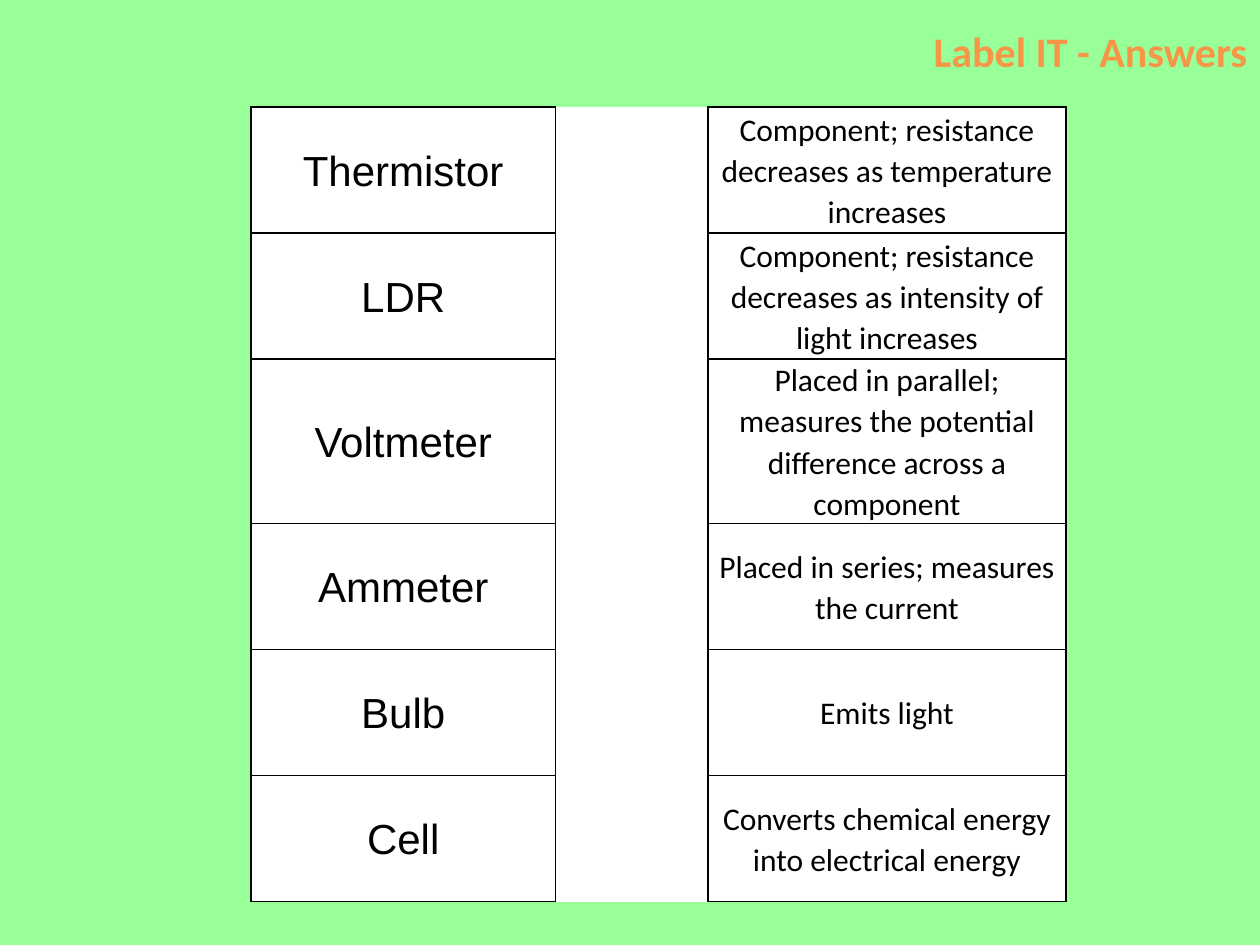
from dataclasses import dataclass

from lxml.etree import SubElement
from pptx import Presentation
from pptx.dml.color import RGBColor
from pptx.enum.text import MSO_ANCHOR, PP_ALIGN
from pptx.oxml.ns import qn
from pptx.util import Inches, Pt


@dataclass(frozen=True)
class Theme:
    background: str = "99FF99"
    heading: str = "F79646"
    ink: str = "000000"
    paper: str = "FFFFFF"
    term_font: str = "Arial"
    body_font: str = "Calibri"
    large: int = 24
    small: int = 18
    line_spacing: float = 1.07
    border: float = 1


ANSWERS = [
    ("Thermistor", "Component; resistance decreases as temperature increases"),
    ("LDR", "Component; resistance decreases as intensity of light increases"),
    ("Voltmeter", "Placed in parallel; measures the potential difference across a component"),
    ("Ammeter", "Placed in series; measures the current"),
    ("Bulb", "Emits light"),
    ("Cell", "Converts chemical energy into electrical energy"),
]
COLUMN_WIDTHS = (2.42, 1.21, 2.84)
ROW_HEIGHT = 1


class SlideBuilder:
    def __init__(self, slide, theme):
        self.slide = slide
        self.theme = theme
        self.fill(slide.background, theme.background)

    def fill(self, target, color):
        target.fill.solid()
        target.fill.fore_color.rgb = RGBColor.from_string(color)

    def set_text(self, paragraph, wording, color, alignment, **font_format):
        paragraph.text = wording
        paragraph.alignment = alignment
        font = paragraph.runs[0].font
        font.color.rgb = RGBColor.from_string(color)
        for attribute, value in font_format.items():
            setattr(font, attribute, value)

    def title(self, wording, left, top, width, height):
        heading = self.slide.shapes.title
        box = {"left": left, "top": top, "width": width, "height": height}
        for attribute, value in box.items():
            setattr(heading, attribute, Inches(value))
        heading.text_frame.vertical_anchor = MSO_ANCHOR.MIDDLE
        self.set_text(heading.text_frame.paragraphs[0], wording, self.theme.heading,
                      PP_ALIGN.RIGHT, name=self.theme.body_font,
                      size=Pt(self.theme.large), bold=True)

    def style_cell(self, cell, sides="LRTB"):
        """Line the given sides and fill; borders must precede the fill in the XML."""
        properties = cell._tc.get_or_add_tcPr()
        for side in "LRTB":
            line = SubElement(properties, qn(f"a:ln{side}"), w=str(Pt(self.theme.border)))
            if side in sides:
                solid = SubElement(line, qn("a:solidFill"))
                SubElement(solid, qn("a:srgbClr"), val=self.theme.ink)
            else:
                SubElement(line, qn("a:noFill"))
        self.fill(cell, self.theme.paper)

    def cell_text(self, cell, wording, side_margin, font, size):
        margins = {"margin_left": side_margin, "margin_right": side_margin,
                   "margin_top": 0, "margin_bottom": 0}
        for attribute, value in margins.items():
            setattr(cell, attribute, Inches(value))
        cell.vertical_anchor = MSO_ANCHOR.MIDDLE
        paragraph = cell.text_frame.paragraphs[0]
        paragraph.line_spacing = self.theme.line_spacing
        self.set_text(paragraph, wording, self.theme.ink, PP_ALIGN.CENTER,
                      name=font, size=Pt(size))

    def answer_table(self, answers, left, top):
        """Terms and meanings either side of one merged blank column."""
        theme = self.theme
        table = self.slide.shapes.add_table(
            len(answers), len(COLUMN_WIDTHS), Inches(left), Inches(top),
            Inches(sum(COLUMN_WIDTHS)), Inches(ROW_HEIGHT * len(answers))).table
        table.first_row = table.horz_banding = False
        for column, width in zip(table.columns, COLUMN_WIDTHS):
            column.width = Inches(width)
        for row, (term, meaning) in enumerate(answers):
            term_cell, gap, meaning_cell = table.rows[row].cells
            self.style_cell(term_cell)
            self.style_cell(gap, sides="LR")
            self.style_cell(meaning_cell)
            self.cell_text(term_cell, term, 0.07 if row else 0.03,
                           theme.term_font, theme.large)
            self.cell_text(meaning_cell, meaning, 0.03, theme.body_font, theme.small)
        table.cell(0, 1).merge(table.cell(len(answers) - 1, 1))


def main():
    presentation = Presentation()
    presentation.slide_width = Inches(10)
    presentation.slide_height = Inches(7.5)
    title_only = presentation.slide_layouts[5]
    builder = SlideBuilder(presentation.slides.add_slide(title_only), Theme())
    builder.title("Label IT - Answers", 1.77, 0.04, 8.23, 0.72)
    builder.answer_table(ANSWERS, 1.99, 0.85)
    presentation.save("out.pptx")


if __name__ == "__main__":
    main()
